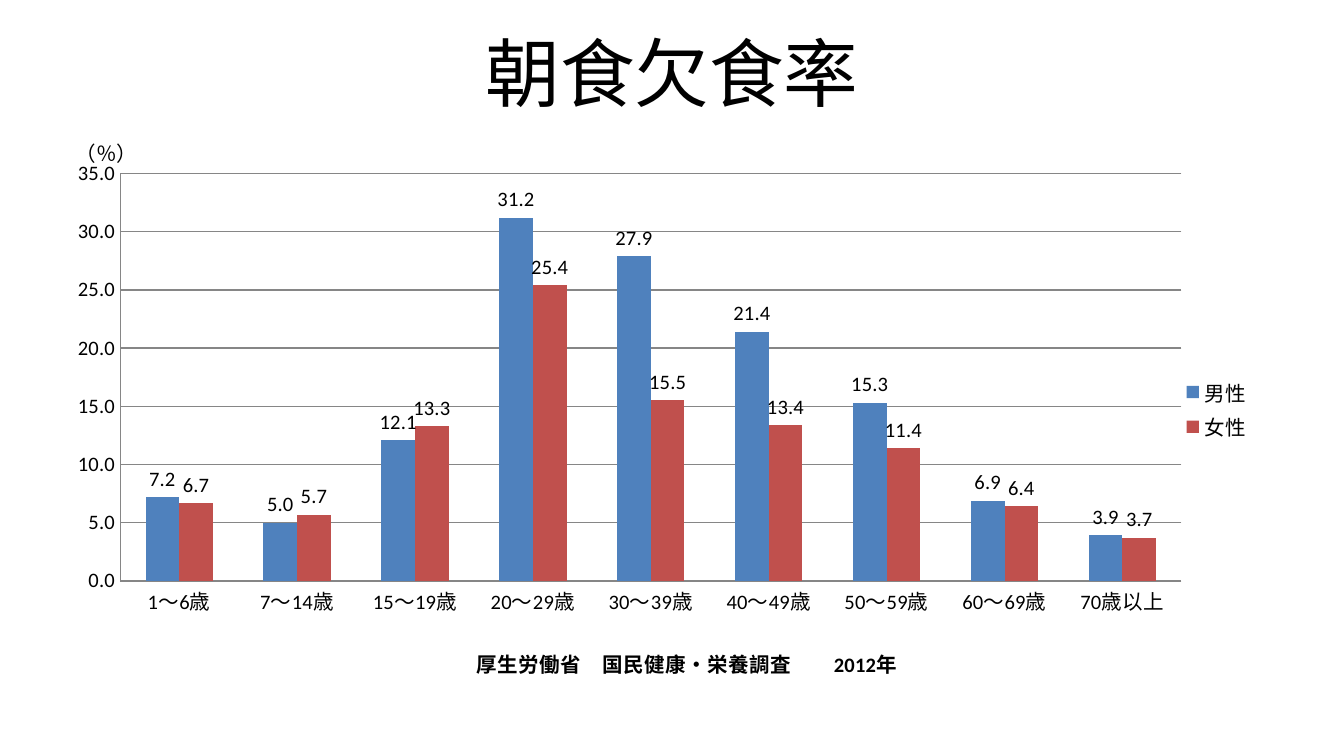
from lxml import etree
from pptx import Presentation
from pptx.chart.data import CategoryChartData
from pptx.dml.color import RGBColor
from pptx.enum.chart import XL_CHART_TYPE, XL_LABEL_POSITION, XL_LEGEND_POSITION, XL_TICK_MARK
from pptx.enum.text import MSO_ANCHOR, PP_ALIGN
from pptx.oxml.ns import qn
from pptx.util import Pt

COLUMN = XL_CHART_TYPE.COLUMN_CLUSTERED
OUTSIDE = XL_LABEL_POSITION.OUTSIDE_END
RIGHT = XL_LEGEND_POSITION.RIGHT
NO_TICK = XL_TICK_MARK.NONE
MIDDLE = MSO_ANCHOR.MIDDLE
CENTER = PP_ALIGN.CENTER

PX = 9525  # 96 px to the inch
WIDE, HIGH = 854, 423  # chart size in px
FONT = "Calibri"
COLORS = {"text": "000000", "line": "868686", "male": "4F81BD", "female": "C0504D"}
NUMBER = "#,##0.0;[Red]#,##0.0"

AGES = ["1～6歳", "7～14歳", "15～19歳", "20～29歳", "30～39歳",
        "40～49歳", "50～59歳", "60～69歳", "70歳以上"]
RATES = [
    ("男性", "male", [7.2, 5, 12.1, 31.2, 27.9, 21.4, 15.3, 6.9, 3.9]),
    ("女性", "female", [6.7, 5.7, 13.3, 25.4, 15.5, 13.4, 11.4, 6.4, 3.7]),
]


def style(font, size, bold=False):
    font.name = FONT
    font.size = Pt(size)
    font.bold = bold
    font.color.rgb = RGBColor.from_string(COLORS["text"])


def place(node, index, **spots):
    """Give a chart part a manual layout, in px from the chart's corner."""
    for old in node.findall(qn("c:layout")):
        node.remove(old)
    layout = etree.Element(qn("c:layout"))
    manual = etree.SubElement(layout, qn("c:manualLayout"))
    if "w" in spots:
        etree.SubElement(manual, qn("c:layoutTarget")).set("val", "inner")
    for key in ("x", "y"):
        etree.SubElement(manual, qn(f"c:{key}Mode")).set("val", "edge")
    for key, value in spots.items():
        share = value / (WIDE if key in "xw" else HIGH)
        etree.SubElement(manual, qn(f"c:{key}")).set("val", str(share))
    node.insert(index, layout)


prs = Presentation()
prs.slide_width, prs.slide_height = 960 * PX, 540 * PX
slide = prs.slides.add_slide(prs.slide_layouts[5])

# Title
title = slide.shapes.title
title.left, title.top, title.width, title.height = [n * PX for n in (48, 6, 864, 90)]
frame = title.text_frame
frame.vertical_anchor = MIDDLE
frame.paragraphs[0].alignment = CENTER
run = frame.paragraphs[0].add_run()
run.text = "朝食欠食率"
style(run.font, 40)

# Chart
data = CategoryChartData(number_format=NUMBER)
data.categories = AGES
for name, key, rates in RATES:
    data.add_series(name, rates)
box = [n * PX for n in (49, 81, WIDE, HIGH)]
chart = slide.shapes.add_chart(COLUMN, *box, data).chart
style(chart.font, 11)
chart.has_title = False
chart.has_legend = True
chart.legend.position = RIGHT
chart.legend.include_in_layout = False
style(chart.legend.font, 11)

plot = chart.plots[0]
plot.gap_width = 150
plot.overlap = 0
plot.vary_by_categories = False
for series, (name, key, rates) in zip(plot.series, RATES):
    series.format.fill.solid()
    series.format.fill.fore_color.rgb = RGBColor.from_string(COLORS[key])
    labels = series.data_labels
    labels.show_value = True
    labels.position = OUTSIDE
    labels.number_format = NUMBER
    labels.number_format_is_linked = False
    style(labels.font, 11)

# Axes and their titles
ages, rate = chart.category_axis, chart.value_axis
rate.minimum_scale, rate.maximum_scale, rate.major_unit = 0, 35, 5
rate.has_major_gridlines = True
rate.tick_labels.number_format = NUMBER
rate.tick_labels.number_format_is_linked = False
for axis, words, bold, x, y in [
    (ages, "厚生労働省　国民健康・栄養調査　　2012年", True, 289, 378),
    (rate, "（％）", False, 2, 13),
]:
    axis.major_tick_mark = axis.minor_tick_mark = NO_TICK
    style(axis.tick_labels.font, 11)
    axis.format.line.color.rgb = RGBColor.from_string(COLORS["line"])
    head = axis.axis_title
    run = head.text_frame.paragraphs[0].add_run()
    run.text = words
    style(run.font, 11, bold)
    body = head._element.find(".//" + qn("a:bodyPr"))
    body.set("rot", "0")
    body.set("vert", "horz")
    place(head._element, 1, x=x, y=y)
grid = rate.major_gridlines.format.line
grid.color.rgb = RGBColor.from_string(COLORS["line"])
grid.width = Pt(0.75)

area = chart._chartSpace.find(".//" + qn("c:plotArea"))
place(area, 0, x=37, y=43, w=758, h=291)

prs.save("out.pptx")
